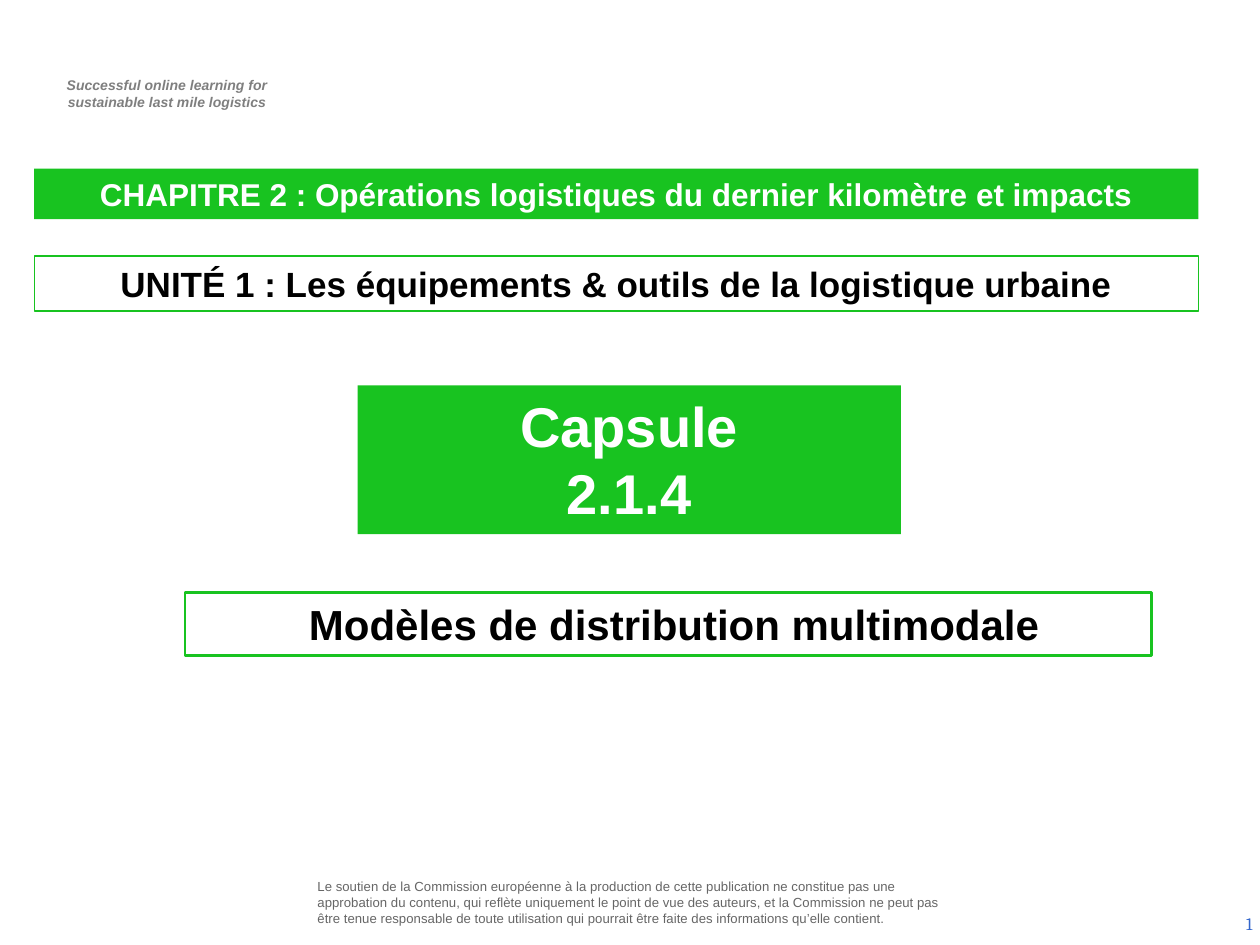
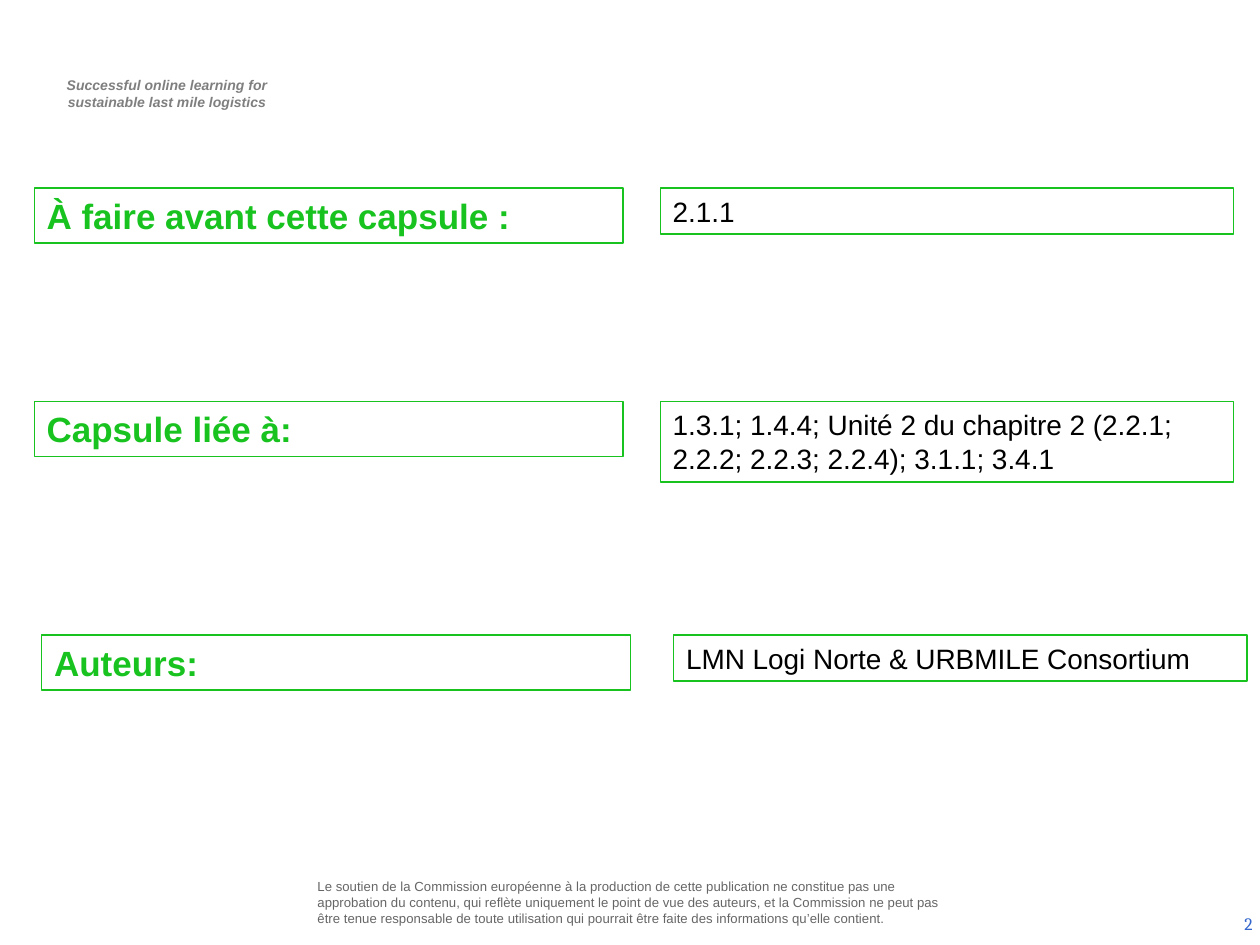
"""Build the title and overview slides of the capsule on multimodal distribution."""
from lxml import etree
from pptx import Presentation
from pptx.dml.color import RGBColor
from pptx.enum.shapes import MSO_SHAPE
from pptx.enum.text import MSO_ANCHOR, MSO_AUTO_SIZE, PP_ALIGN
from pptx.oxml.ns import qn
from pptx.util import Cm, Pt

RECTANGLE = MSO_SHAPE.RECTANGLE
TOP, MIDDLE = MSO_ANCHOR.TOP, MSO_ANCHOR.MIDDLE
LEFT, CENTER, RIGHT = PP_ALIGN.LEFT, PP_ALIGN.CENTER, PP_ALIGN.RIGHT
FIT_SHAPE, NO_FIT = MSO_AUTO_SIZE.SHAPE_TO_FIT_TEXT, MSO_AUTO_SIZE.NONE

GREEN, WHITE, BLACK = "18C320", "FFFFFF", "000000"
TAGLINE_GREY, NOTICE_GREY, NUMBER_BLUE = "7F7F7F", "666666", "3366CC"

TAGLINE = ["Successful online learning for", "sustainable last mile logistics"]
NOTICE = (
    "Le soutien de la Commission européenne à la production de cette publication "
    "ne constitue pas une approbation du contenu, qui reflète uniquement le point "
    "de vue des auteurs, et la Commission ne peut pas être tenue responsable de "
    "toute utilisation qui pourrait être faite des informations qu’elle contient."
)


def rgb(value):
    return RGBColor.from_string(value)


def add_box(slide, place, lines, size, color, bold=False, italic=False, align=LEFT,
            anchor=TOP, fit=FIT_SHAPE, fill=None, line=None, indent=0):
    shape = slide.shapes.add_shape(RECTANGLE, *[Cm(length) for length in place])
    shape.shadow.inherit = False
    if fill:
        shape.fill.solid()
        shape.fill.fore_color.rgb = rgb(fill)
    else:
        shape.fill.background()
    if line:
        shape.line.color.rgb = rgb(GREEN)
        shape.line.width = Pt(line)
    else:
        shape.line.fill.background()
    frame = shape.text_frame
    frame.word_wrap = True
    frame.auto_size = fit
    frame.vertical_anchor = anchor
    for index, text in enumerate(lines):
        paragraph = frame.add_paragraph() if index else frame.paragraphs[0]
        paragraph.text = text
        paragraph.alignment = align
        if indent:
            paragraph._p.get_or_add_pPr().set("marL", str(Cm(indent)))
        font = paragraph.font
        font.name, font.size = "Arial", Pt(size)
        font.bold, font.italic = bold, italic
        font.color.rgb = rgb(color)
    return shape


presentation = Presentation()
presentation.slide_width, presentation.slide_height = Cm(25.4), Cm(19.05)
slides = []

for number in (1, 2):
    slide = presentation.slides.add_slide(presentation.slide_layouts[6])
    slides.append(slide)
    add_box(slide, (0.74, 1.42, 5.16, 0.94), TAGLINE, 8, TAGLINE_GREY,
            bold=True, italic=True, align=CENTER, indent=0.1)
    notice = add_box(slide, (6.3, 17.55, 13, 1.27), [NOTICE], 7.5, NOTICE_GREY,
                     anchor=MIDDLE, fit=NO_FIT)
    frame = notice.text_frame
    frame.margin_left = frame.margin_right = Cm(0.1)
    frame.margin_top = frame.margin_bottom = Cm(0.1)

    page = add_box(slide, (19.58, 18.11, 5.92, 1.02), [str(number)], 10, NUMBER_BLUE,
                   align=RIGHT, anchor=MIDDLE, fit=NO_FIT)
    run = page.text_frame.paragraphs[0].runs[0]
    run.font.name, run.font.size = "Cambria", Pt(10)
    run.font.color.rgb = rgb(NUMBER_BLUE)
    field = etree.Element(qn("a:fld"), type="slidenum",
                          id="{B6F15528-21DE-4FAA-801E-634DDDAF4B2B}")
    run._r.addprevious(field)
    field.extend(list(run._r))
    field.getparent().remove(run._r)

title_slide, overview_slide = slides

add_box(title_slide, (7.21, 7.77, 10.95, 3), ["Capsule", "2.1.4"], 32, WHITE,
        bold=True, align=CENTER, fill=GREEN)
add_box(title_slide, (3.73, 11.94, 19.48, 1.27), ["Modèles de distribution multimodale"],
        24, BLACK, bold=True, align=CENTER, line=1.5, indent=0.24)
add_box(title_slide, (0.69, 3.4, 23.47, 1.02),
        ["CHAPITRE 2 : Opérations logistiques du dernier kilomètre et impacts"],
        18, WHITE, bold=True, align=CENTER, fill=GREEN)
add_box(title_slide, (0.69, 5.16, 23.47, 1.11),
        ["UNITÉ 1 : Les équipements & outils de la logistique urbaine"],
        20, BLACK, bold=True, align=CENTER, line=0.75)

overview_rows = [
    (3.79, 0.69, 13.31, 0.93, "À faire avant cette capsule :", "2.1.1"),
    (8.1, 0.69, 13.31, 1.62, "Capsule liée à:",
     "1.3.1; 1.4.4; Unité 2 du chapitre 2 (2.2.1; 2.2.2; 2.2.3; 2.2.4); 3.1.1; 3.4.1"),
    (12.8, 0.84, 13.58, 0.93, "Auteurs:", "LMN Logi Norte & URBMILE Consortium"),
]
for top, label_left, detail_left, detail_height, label, detail in overview_rows:
    add_box(overview_slide, (label_left, top, 11.87, 1.11), [label], 20, GREEN,
            bold=True, fill=WHITE, line=0.75)
    add_box(overview_slide, (detail_left, top, 11.56, detail_height), [detail], 16, BLACK,
            fill=WHITE, line=0.75)

presentation.save("out.pptx")
